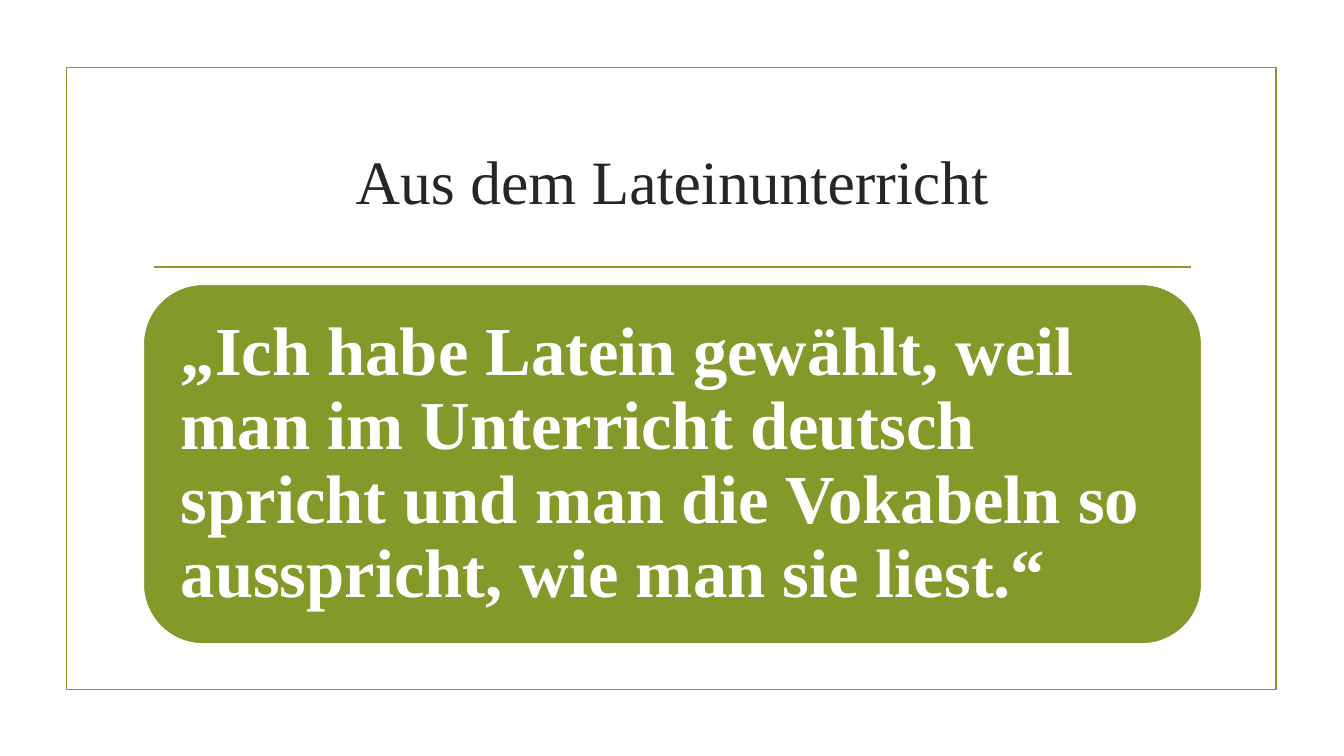
from dataclasses import dataclass

import pptx
import pptx.dml.color
import pptx.enum.shapes
import pptx.enum.text
import pptx.oxml.ns
import pptx.util
from lxml import etree

Inches = pptx.util.Inches
Pt = pptx.util.Pt
RGBColor = pptx.dml.color.RGBColor
PP_ALIGN = pptx.enum.text.PP_ALIGN
MSO_SHAPE = pptx.enum.shapes.MSO_SHAPE

TITLE = "Aus dem Lateinunterricht"
QUOTE = (
    "„Ich habe Latein gewählt, weil man im Unterricht deutsch spricht "
    "und man die Vokabeln so ausspricht, wie man sie liest.“"
)

SLIDE_SIZE = (13.33, 7.5)
FRAME_BOX = (0.66, 0.67, 12, 6.17)
TITLE_BOX = (1.42, 1.07, 10.5, 1.43)
QUOTE_BOX = (1.42, 2.82, 10.5, 3.57)
DIVIDER = (1.53, 2.65, 11.81, 2.65)


@dataclass(frozen=True)
class Theme:
    font: str = "Times New Roman"
    green: RGBColor = RGBColor.from_string("83992A")
    white: RGBColor = RGBColor.from_string("FFFFFF")
    dark: RGBColor = RGBColor.from_string("262626")
    title_size: int = 44
    quote_size: int = 49
    line_width: float = 1.25


THEME = Theme()


def lengths(values):
    return [Inches(value) for value in values]


def set_line(item, color):
    item.line.color.rgb = color
    item.line.width = Pt(THEME.line_width)


def set_text(shape, text, size, color, bold, alignment, inset):
    frame = shape.text_frame
    frame.text = text
    frame.word_wrap = True
    frame.auto_size = pptx.enum.text.MSO_AUTO_SIZE.NONE
    frame.vertical_anchor = pptx.enum.text.MSO_ANCHOR.MIDDLE
    frame.margin_left = frame.margin_right = Inches(inset)
    frame.margin_top = frame.margin_bottom = Inches(inset)
    paragraph = frame.paragraphs[0]
    paragraph.alignment = alignment
    font = paragraph.runs[0].font
    font.name = THEME.font
    font.size = Pt(size)
    font.bold = bold
    font.color.rgb = color
    return paragraph


def add_box(slide, kind, box, line_color):
    shape = slide.shapes.add_shape(kind, *lengths(box))
    shape.shadow.inherit = False
    set_line(shape, line_color)
    return shape


def main():
    presentation = pptx.Presentation()
    presentation.slide_width, presentation.slide_height = lengths(SLIDE_SIZE)
    slide = presentation.slides.add_slide(presentation.slide_layouts[5])

    title = slide.shapes.title
    title.left, title.top, title.width, title.height = lengths(TITLE_BOX)
    set_text(title, TITLE, THEME.title_size, THEME.dark, False, PP_ALIGN.CENTER, 0.1)

    frame = add_box(slide, MSO_SHAPE.RECTANGLE, FRAME_BOX, THEME.green)
    frame.fill.background()

    divider = slide.shapes.add_connector(
        pptx.enum.shapes.MSO_CONNECTOR.STRAIGHT, *lengths(DIVIDER)
    )
    set_line(divider, THEME.green)
    etree.SubElement(divider._element.spPr, pptx.oxml.ns.qn("a:effectLst"))

    quote = add_box(slide, MSO_SHAPE.ROUNDED_RECTANGLE, QUOTE_BOX, THEME.white)
    quote.fill.solid()
    quote.fill.fore_color.rgb = THEME.green
    paragraph = set_text(
        quote, QUOTE, THEME.quote_size, THEME.white, True, PP_ALIGN.LEFT, 0.2
    )
    paragraph.line_spacing = 0.9

    presentation.save("out.pptx")


if __name__ == "__main__":
    main()
